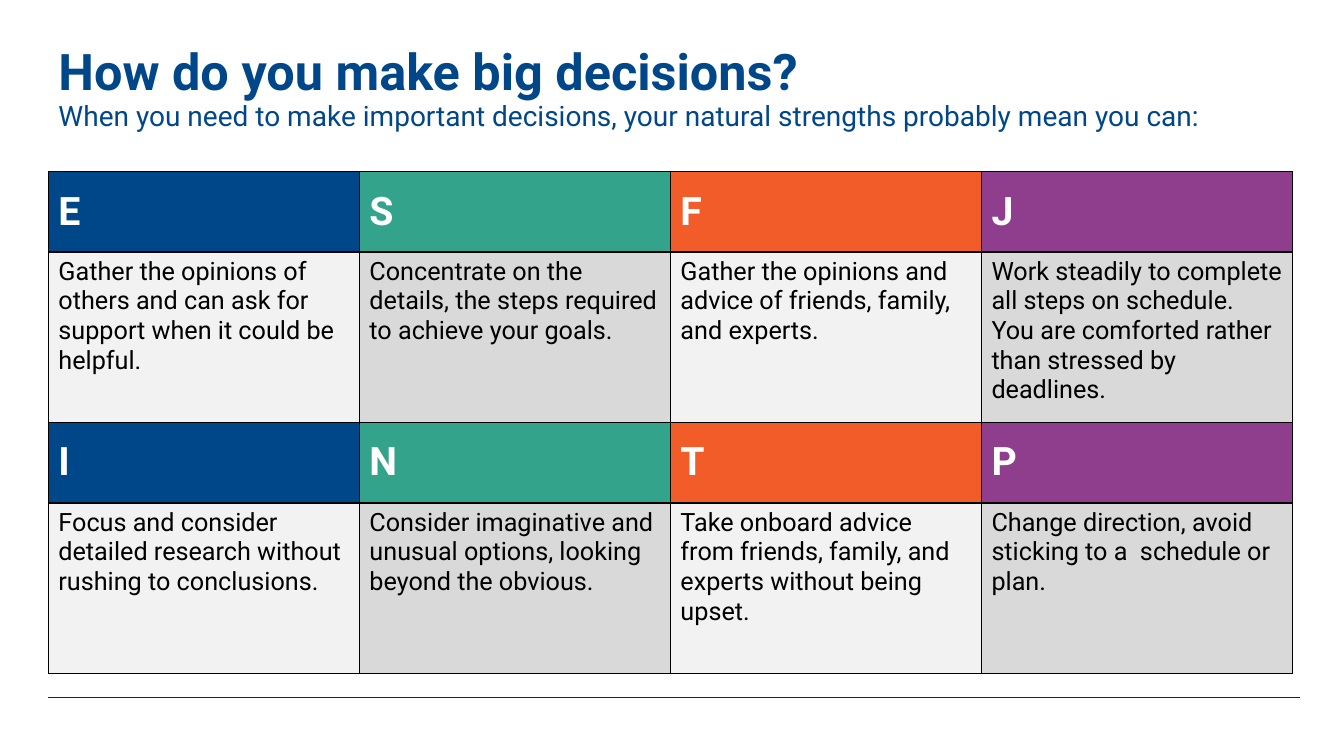
from dataclasses import dataclass

from lxml import etree
from pptx import Presentation
from pptx.dml.color import RGBColor
from pptx.enum.shapes import MSO_CONNECTOR
from pptx.enum.text import MSO_ANCHOR, MSO_AUTO_SIZE, PP_ALIGN
from pptx.oxml.ns import qn
from pptx.slide import Slide
from pptx.table import _Cell
from pptx.util import Inches, Pt

STRAIGHT = MSO_CONNECTOR.STRAIGHT
TOP, MIDDLE = MSO_ANCHOR.TOP, MSO_ANCHOR.MIDDLE
LEFT = PP_ALIGN.LEFT
NO_AUTOFIT = MSO_AUTO_SIZE.NONE
TITLE_ONLY = 5


@dataclass(frozen=True)
class Theme:
    font: str = "Roboto"
    heading: str = "00478A"
    letter: str = "FFFFFF"
    body: str = "000000"
    border: str = "000000"
    rule: str = "231F20"
    columns: tuple[str, ...] = ("00478A", "33A38C", "F25C29", "8F3E8D")
    bands: tuple[str, ...] = ("F2F2F2", "D9D9D9")
    title_size: int = 36
    subtitle_size: int = 20
    letter_size: int = 28
    body_size: int = 18


@dataclass(frozen=True)
class Preference:
    letter: str
    strength: str


THEME = Theme()
MARGIN = 0.48
TABLE_WIDTH = 12.34
LETTER_HEIGHT, STRENGTH_HEIGHT = 0.8, 1.69

PREFERENCE_ROWS = [
    [
        Preference("E", "Gather the opinions of others and can ask for support when it could be helpful."),
        Preference("S", "Concentrate on the details, the steps required to achieve your goals."),
        Preference("F", "Gather the opinions and advice of friends, family, and experts."),
        Preference("J", "Work steadily to complete all steps on schedule. "
                        "You are comforted rather than stressed by deadlines."),
    ],
    [
        Preference("I", "Focus and consider detailed research without rushing to conclusions."),
        Preference("N", "Consider imaginative and unusual options, looking beyond the obvious."),
        Preference("T", "Take onboard advice from friends, family, and experts without being upset."),
        Preference("P", "Change direction, avoid sticking to a  schedule or plan."),
    ],
]


def style_paragraph(paragraph, size: int, color: str, bold: bool) -> None:
    paragraph.alignment = LEFT
    font = paragraph.font
    font.name, font.size, font.bold = THEME.font, Pt(size), bold
    font.color.rgb = RGBColor.from_string(color)


def add_heading(slide: Slide, question: str, lead_in: str) -> None:
    heading = slide.shapes.title
    heading.left, heading.top = Inches(MARGIN), Inches(0.4)
    heading.width, heading.height = Inches(12.41), Inches(1.05)
    frame = heading.text_frame
    frame.word_wrap, frame.auto_size = True, NO_AUTOFIT
    frame.vertical_anchor = TOP
    frame.margin_top = Inches(0.07)
    frame.text = f"{question}\n{lead_in}"
    sizes = (THEME.title_size, THEME.subtitle_size)
    for paragraph, size, bold in zip(frame.paragraphs, sizes, (True, False)):
        paragraph.line_spacing = 0.9
        style_paragraph(paragraph, size, THEME.heading, bold)


def add_borders(cell: _Cell) -> None:
    properties = cell._tc.get_or_add_tcPr()
    for index, side in enumerate(("a:lnL", "a:lnR", "a:lnT", "a:lnB")):
        line = etree.Element(qn(side), w=str(Pt(1)))
        fill = etree.SubElement(line, qn("a:solidFill"))
        etree.SubElement(fill, qn("a:srgbClr"), val=THEME.border)
        properties.insert(index, line)


def fill_cell(cell: _Cell, text: str, fill: str, is_letter: bool) -> None:
    cell.fill.solid()
    cell.fill.fore_color.rgb = RGBColor.from_string(fill)
    cell.text = text
    cell.vertical_anchor = MIDDLE if is_letter else TOP
    size, color = ((THEME.letter_size, THEME.letter) if is_letter
                   else (THEME.body_size, THEME.body))
    style_paragraph(cell.text_frame.paragraphs[0], size, color, is_letter)
    add_borders(cell)


def add_preferences(slide: Slide) -> None:
    row_count, column_count = 2 * len(PREFERENCE_ROWS), len(THEME.columns)
    height = len(PREFERENCE_ROWS) * (LETTER_HEIGHT + STRENGTH_HEIGHT)
    table = slide.shapes.add_table(
        row_count, column_count, Inches(MARGIN), Inches(1.7),
        Inches(TABLE_WIDTH), Inches(height)).table
    for column in table.columns:
        column.width = Inches(TABLE_WIDTH / column_count)
    for index, row in enumerate(table.rows):
        row.height = Inches(STRENGTH_HEIGHT if index % 2 else LETTER_HEIGHT)

    for pair, preferences in enumerate(PREFERENCE_ROWS):
        for column, preference in enumerate(preferences):
            band = THEME.bands[column % len(THEME.bands)]
            fill_cell(table.cell(2 * pair, column), preference.letter,
                      THEME.columns[column], True)
            fill_cell(table.cell(2 * pair + 1, column), preference.strength, band, False)


def add_footer_rule(slide: Slide) -> None:
    rule = slide.shapes.add_connector(
        STRAIGHT, Inches(MARGIN), Inches(6.92), Inches(12.89), Inches(6.92))
    rule.line.color.rgb = RGBColor.from_string(THEME.rule)
    rule.line.width = Pt(0.5)
    etree.SubElement(rule._element.spPr, qn("a:effectLst"))


def main() -> None:
    presentation = Presentation()
    presentation.slide_width, presentation.slide_height = Inches(13.33), Inches(7.5)
    slide = presentation.slides.add_slide(presentation.slide_layouts[TITLE_ONLY])

    # Footer line, heading, then the grid of preferences
    add_footer_rule(slide)
    add_heading(
        slide, "How do you make big decisions?",
        "When you need to make important decisions, your natural strengths probably mean you can:")
    add_preferences(slide)
    presentation.save("out.pptx")


if __name__ == "__main__":
    main()
